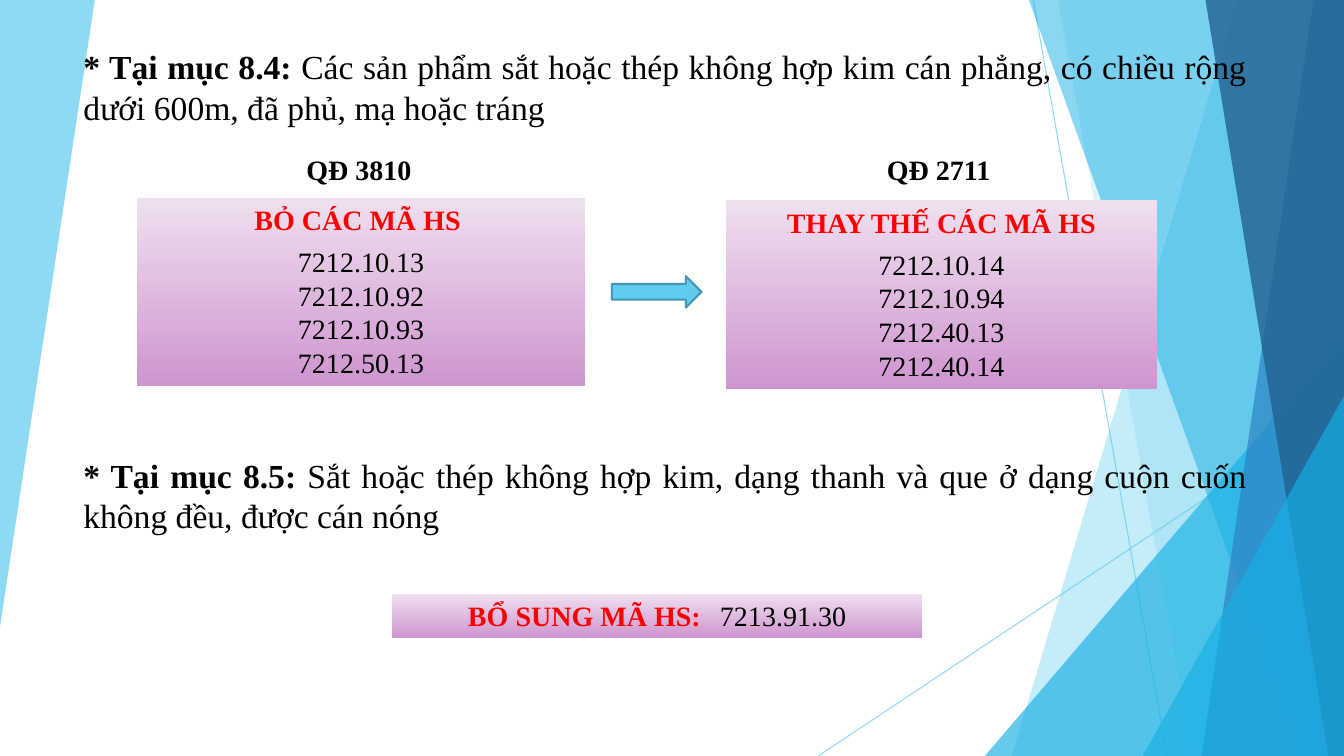
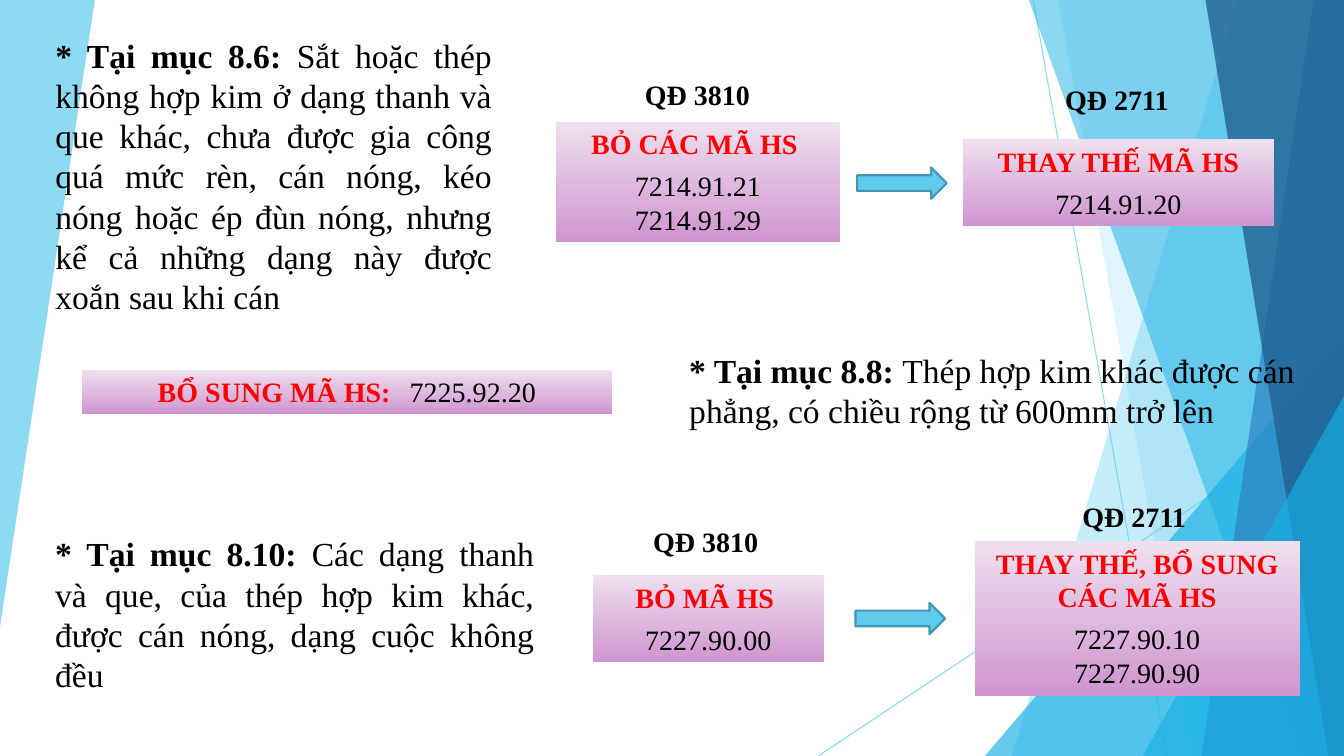
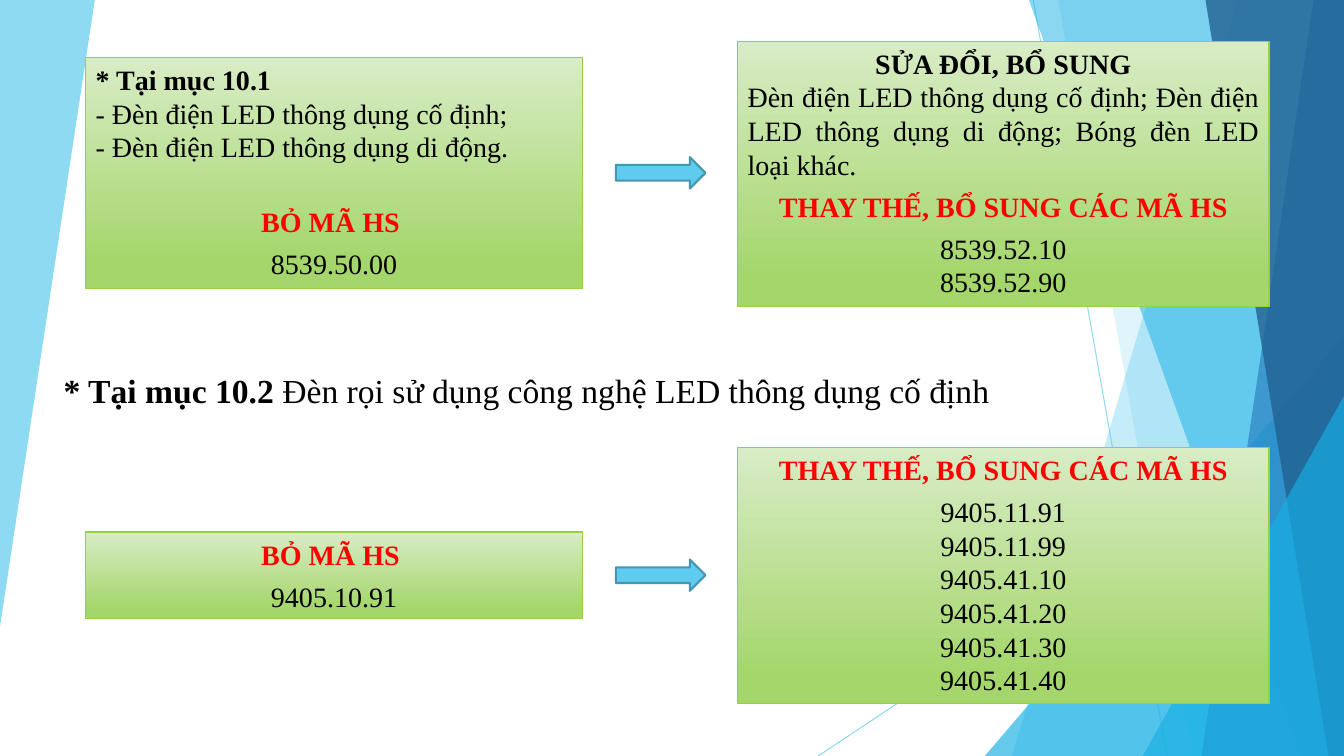
from lxml import etree
from pptx import Presentation
from pptx.dml.color import RGBColor
from pptx.enum.shapes import MSO_CONNECTOR, MSO_SHAPE
from pptx.enum.text import MSO_ANCHOR, MSO_AUTO_SIZE, PP_ALIGN
from pptx.oxml.ns import qn
from pptx.util import Cm, Pt

LEFT, MID, JUST = PP_ALIGN.LEFT, PP_ALIGN.CENTER, PP_ALIGN.JUSTIFY
TOP = MSO_ANCHOR.TOP
FIXED = MSO_AUTO_SIZE.NONE
RECT, ARROW = MSO_SHAPE.RECTANGLE, MSO_SHAPE.RIGHT_ARROW
WEDGE = MSO_SHAPE.ISOSCELES_TRIANGLE
LINE = MSO_CONNECTOR.STRAIGHT

BLACK = RGBColor(0x00, 0x00, 0x00)
RED = RGBColor(0xFF, 0x00, 0x00)
SKY = RGBColor(0x5F, 0xCB, 0xEF)
AQUA = RGBColor(0x17, 0xB0, 0xE4)
BLUE = RGBColor(0x2E, 0x83, 0xC3)
NAVY = RGBColor(0x22, 0x62, 0x92)
STEEL = RGBColor(0x46, 0x96, 0xB1)
LILAC = RGBColor(0xEF, 0xE0, 0xEF)
MAUVE = RGBColor(0xCF, 0x95, 0xCF)
MINT = RGBColor(0xD8, 0xEC, 0xC5)
LIME = RGBColor(0xA5, 0xD6, 0x6C)
GREEN = RGBColor(0x96, 0xD1, 0x41)

FONT = "Times New Roman"
WIDE, HIGH = 33.87, 19.05


def veil(fill, colour, alpha):
    fill.solid()
    fill.fore_color.rgb = colour
    tint = fill._xPr.find(qn("a:solidFill"))[0]
    etree.SubElement(tint, qn("a:alpha")).set("val", str(alpha * 1000))


def write(frame, size, rows):
    frame.word_wrap = True
    frame.auto_size = FIXED
    frame.vertical_anchor = TOP
    for i, (align, after, runs) in enumerate(rows):
        para = frame.add_paragraph() if i else frame.paragraphs[0]
        para.alignment = align
        para.space_after = Pt(after)
        for text, colour, bold in runs:
            run = para.add_run()
            run.text = text
            run.font.name = FONT
            run.font.size = Pt(size)
            run.font.bold = bold
            run.font.color.rgb = colour


deck = Presentation()
deck.slide_width, deck.slide_height = Cm(WIDE), Cm(HIGH)
plain = deck.slide_layouts[5]
first = deck.slides.add_slide(plain)

decor = []
for x1, y1, x2, y2 in [(26.04, 0, 29.41, HIGH), (WIDE, 10.24, 20.62, HIGH)]:
    ray = first.shapes.add_connector(LINE, Cm(x1), Cm(y1), Cm(x2), Cm(y2))
    veil(ray.line.fill, SKY, 70)
    ray.line.width = Pt(0.75)
    etree.SubElement(ray.element.spPr, qn("a:effectLst"))
    decor.append(ray)

for corners, colour, alpha in [
    ([(0, 0), (2.39, 0), (0, 15.8)], SKY, 70),
    ([(31.19, 0), (25.5, HIGH)], SKY, 36),
    ([(26.67, 0), (30.05, HIGH)], SKY, 20),
    ([(24.82, 8.46)], AQUA, 66),
    ([(25.93, 0), (32.79, HIGH)], AQUA, 50),
    ([(33.1, 0), (30.28, HIGH)], BLUE, 70),
    ([(30.38, 0), (33.48, HIGH)], NAVY, 80),
    ([(28.8, 9.98)], AQUA, 66),
]:
    x, y = corners[0]
    if len(corners) == 1:
        facet = first.shapes.add_shape(
            WEDGE, Cm(x), Cm(y), Cm(WIDE - x), Cm(HIGH - y))
        facet.adjustments[0] = 1
    else:
        if len(corners) == 2:
            corners = [corners[0], (WIDE, 0), (WIDE, HIGH), corners[1]]
        pen = first.shapes.build_freeform(Cm(x), Cm(y))
        pen.add_line_segments([(Cm(a), Cm(b)) for a, b in corners[1:]])
        facet = pen.convert_to_shape()
    veil(facet.fill, colour, alpha)
    facet.line.fill.background()
    facet.shadow.inherit = False
    decor.append(facet)

tree = deck.slide_master.shapes._spTree
for item in decor:
    tree.append(item.element)

VIOLET = (LILAC, MAUVE, 1, None)
LEAF = (MINT, LIME, 0.88, GREEN)
DROP, SWAP = "BỎ MÃ HS ", "THAY THẾ, BỔ SUNG CÁC MÃ HS"
ADD = "BỔ SUNG MÃ HS:\t"

old_lamp = [
    (JUST, 0, [("* Tại mục 10.1", BLACK, True)]),
    (LEFT, 0, [("- Đèn điện LED thông dụng cố định;", BLACK, False)]),
    (LEFT, 29.5, [("- Đèn điện LED thông dụng di động.", BLACK, False)]),
]
new_lamp = [
    (MID, 0, [("SỬA ĐỔI, BỔ SUNG", BLACK, True)]),
    (JUST, 6, [("Đèn điện LED thông dụng cố định; Đèn điện LED thông dụng "
                "di động; Bóng đèn LED loại khác.", BLACK, False)]),
]

pages = [
    {
        "tone": VIOLET,
        "notes": [
            ((1.85, 1.04, 29.82, 2.31), JUST, "* Tại mục 8.4: ",
             "Các sản phẩm sắt hoặc thép không hợp kim cán phẳng, "
             "có chiều rộng dưới 600m, đã phủ, mạ hoặc tráng"),
            ((1.85, 11.33, 29.82, 2.31), JUST, "* Tại mục 8.5: ",
             "Sắt hoặc thép không hợp kim, dạng thanh và que ở dạng "
             "cuộn cuốn không đều, được cán nóng"),
        ],
        "panels": [
            ((3.45, 4.98, 11.3, 4.75), [], "BỎ CÁC MÃ HS ",
             ["7212.10.13", "7212.10.92", "7212.10.93", "7212.50.13"]),
            ((18.29, 5.05, 10.87, 4.75), [], "THAY THẾ CÁC MÃ HS",
             ["7212.10.14", "7212.10.94", "7212.40.13", "7212.40.14"]),
            ((9.88, 14.96, 13.36, 1.12), [], ADD, ["7213.91.30"]),
        ],
        "tags": [(7.47, 3.71, "QĐ 3810"), (22.1, 3.73, "QĐ 2711")],
        "arrows": [(15.42, 6.96)],
    },
    {
        "tone": VIOLET,
        "notes": [
            ((1.14, 0.74, 11.51, 7.44), JUST, "* Tại mục 8.6: ",
             "Sắt hoặc thép không hợp kim ở dạng thanh và que khác, chưa "
             "được gia công quá mức rèn, cán nóng, kéo nóng hoặc ép đùn "
             "nóng, nhưng kể cả những dạng này được xoắn sau khi cán"),
            ((17.12, 8.69, 16, 2.31), LEFT, "* Tại mục 8.8: ",
             "Thép hợp kim khác được cán phẳng, có chiều rộng từ 600mm "
             "trở lên"),
            ((1.14, 13.31, 12.57, 3.33), JUST, "* Tại mục 8.10: ",
             "Các dạng thanh và que, của thép hợp kim khác, được cán nóng, "
             "dạng cuộc không đều"),
        ],
        "panels": [
            ((14.02, 3.07, 7.14, 3.02), [], "BỎ CÁC MÃ HS ",
             ["7214.91.21", "7214.91.29"]),
            ((24.26, 3.51, 7.85, 2.18), [], "THAY THẾ MÃ HS",
             ["7214.91.20"]),
            ((2.06, 9.32, 13.36, 1.12), [], ADD, ["7225.92.20"]),
            ((14.94, 14.5, 5.82, 2.18), [], DROP, ["7227.90.00"]),
            ((24.56, 13.64, 8.2, 3.89), [], SWAP,
             ["7227.90.10", "7227.90.90"]),
        ],
        "tags": [(16, 1.83, "QĐ 3810"), (26.59, 1.96, "QĐ 2711"),
                 (16.21, 13.08, "QĐ 3810"), (27.03, 12.45, "QĐ 2711")],
        "arrows": [(21.6, 4.22), (21.56, 15.19)],
    },
    {
        "tone": LEAF,
        "notes": [
            ((1.35, 9.19, 25.04, 1.27), LEFT, "* Tại mục 10.2 ",
             "Đèn rọi sử dụng công nghệ LED thông dụng cố định"),
        ],
        "panels": [
            ((2.16, 1.45, 12.52, 5.82), old_lamp, DROP, ["8539.50.00"]),
            ((18.59, 1.04, 13.39, 6.68), new_lamp, SWAP,
             ["8539.52.10", "8539.52.90"]),
            ((2.16, 13.41, 12.52, 2.18), [], DROP, ["9405.10.91"]),
            ((18.59, 11.28, 13.39, 6.45), [], SWAP,
             ["9405.11.91", "9405.11.99", "9405.41.10",
              "9405.41.20", "9405.41.30", "9405.41.40"]),
        ],
        "tags": [],
        "arrows": [(15.52, 3.96), (15.52, 14.1)],
    },
]

for n, page in enumerate(pages):
    slide = deck.slides.add_slide(plain) if n else first
    shapes = slide.shapes

    for i, (area, align, head, text) in enumerate(page["notes"]):
        x, y, w, h = [Cm(v) for v in area]
        if i:
            note = shapes.add_textbox(x, y, w, h)
        else:
            note = shapes.title
            note.left, note.top, note.width, note.height = x, y, w, h
        write(note.text_frame, 24,
              [(align, 0, [(head, BLACK, True), (text, BLACK, False)])])

    light, dark, end, edge = page["tone"]
    for area, lead, head, codes in page["panels"]:
        panel = shapes.add_shape(RECT, *[Cm(v) for v in area])
        panel.shadow.inherit = False
        panel.fill.gradient()
        panel.fill.gradient_angle = 270
        stops = panel.fill.gradient_stops
        for stop, colour, spot in zip(stops, (light, dark), (0, end)):
            stop.color.rgb = colour
            stop.position = spot
        if edge:
            panel.line.color.rgb = edge
            panel.line.width = Pt(1)
        else:
            panel.line.fill.background()
        title = (head, RED, True)
        if head == ADD:
            rows = [(MID, 6, [title, (codes[0], BLACK, False)])]
        else:
            rows = lead + [(MID, 6, [title])]
            rows += [(MID, 0, [(code, BLACK, False)]) for code in codes]
        write(panel.text_frame, 20, rows)

    for x, y, text in page["tags"]:
        tag = shapes.add_textbox(Cm(x), Cm(y), Cm(3.28), Cm(1.12))
        write(tag.text_frame, 20, [(LEFT, 0, [(text, BLACK, True)])])

    for x, y in page["arrows"]:
        arrow = shapes.add_shape(ARROW, Cm(x), Cm(y), Cm(2.26), Cm(0.79))
        arrow.shadow.inherit = False
        arrow.fill.solid()
        arrow.fill.fore_color.rgb = SKY
        arrow.line.color.rgb = STEEL
        arrow.line.width = Pt(1.5)

deck.save("out.pptx")
